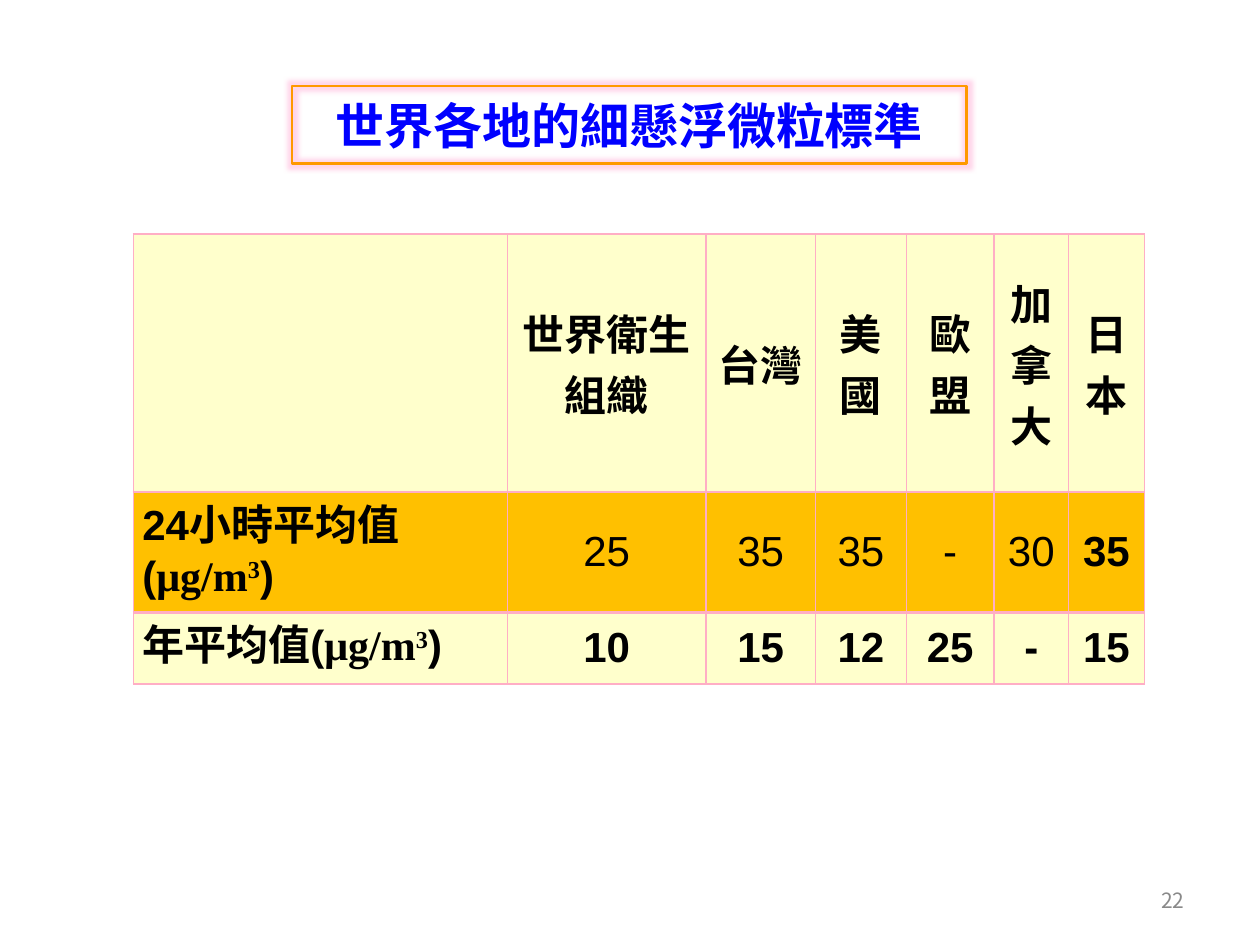
from dataclasses import dataclass
from lxml.etree import SubElement as Sub
from pptx import Presentation as Deck
from pptx.dml.color import RGBColor as Rgb
from pptx.enum.text import MSO_ANCHOR as Anchor, PP_ALIGN as Align
from pptx.oxml.ns import qn
from pptx.util import Cm, Pt


@dataclass(frozen=True)
class Theme:
    # Fonts
    cjk: str = "Noto Sans CJK JP"
    sans: str = "Arial"
    serif: str = "Times New Roman"
    # Colours
    title: str = "0000FF"
    frame: str = "FF9900"
    glow: str = "FF99CC"
    text: str = "000000"
    pale: str = "FFFFCC"
    gold: str = "FFC000"
    rule: str = "FFAEC5"
    grey: str = "898989"
    # Type sizes
    head: int = 28
    body: int = 24
    small: int = 12


class Page:
    def __init__(self, deck, theme):
        self.theme = theme
        self.slide = deck.slides.add_slide(deck.slide_layouts[5])

    def run(self, para, text, font, size, tint, bold=False, base=0):
        run = para.add_run()
        run.text = text
        run.font.name = font
        run.font.size = Pt(size)
        run.font.bold = bold
        run.font.color.rgb = Rgb.from_string(tint)
        prop = run.font._element
        Sub(prop, qn("a:ea"), typeface=self.theme.cjk)
        if base:
            prop.set("baseline", str(base * 1000))

    def title(self, text, box):
        look, shape = self.theme, self.slide.shapes.title
        shape.left, shape.top, shape.width, shape.height = map(Cm, box)
        shape.line.color.rgb = Rgb.from_string(look.frame)
        shape.line.width = Pt(1.5)
        # Soft glow round the frame
        effect = Sub(shape._element.spPr, qn("a:effectLst"))
        glow = Sub(effect, qn("a:glow"), rad=str(Pt(5)))
        tint = Sub(glow, qn("a:srgbClr"), val=look.glow)
        Sub(tint, qn("a:alpha"), val="40000")
        frame = shape.text_frame
        frame.vertical_anchor = Anchor.MIDDLE
        para = frame.paragraphs[0]
        para.alignment = Align.CENTER
        self.run(para, text, look.cjk, look.head, look.title, True)

    def edge(self, cell, side, width):
        line = Sub(cell._tc.get_or_add_tcPr(), qn("a:ln" + side), w=str(Pt(width)))
        fill = Sub(line, qn("a:solidFill"))
        Sub(fill, qn("a:srgbClr"), val=self.theme.rule)

    def cell(self, cell, runs, fill, heavy, first):
        look = self.theme
        cell.margin_left = cell.margin_right = Cm(0.18)
        cell.margin_top = cell.margin_bottom = 0
        cell.vertical_anchor = Anchor.TOP if first else Anchor.MIDDLE
        for side in "LRTB":
            self.edge(cell, side, 2 if side in heavy else 1)
        cell.fill.solid()
        cell.fill.fore_color.rgb = Rgb.from_string(fill)
        para = cell.text_frame.paragraphs[0]
        para.alignment = Align.LEFT if first else Align.CENTER
        for text, font, bold, base in runs:
            self.run(para, text, font, look.body, look.text, bold, base)
        if not runs:
            para.font.size = Pt(look.body)

    def table(self, rows, fills, spot, wide, high):
        box = (*map(Cm, spot), Cm(sum(wide)), Cm(sum(high)))
        grid = self.slide.shapes.add_table(len(rows), len(wide), *box).table
        grid.first_row = grid.horz_banding = False
        for col, size in zip(grid.columns, wide):
            col.width = Cm(size)
        last = len(rows) - 1
        for i, (row, fill) in enumerate(zip(rows, fills)):
            grid.rows[i].height = Cm(high[i])
            # The rule above the last row is double weight
            heavy = "T" if i == last else "B" if i == last - 1 else ""
            for j, runs in enumerate(row):
                self.cell(grid.cell(i, j), runs, fill, heavy, j == 0)

    def number(self, text, box):
        look = self.theme
        frame = self.slide.shapes.add_textbox(*map(Cm, box)).text_frame
        frame.word_wrap = True
        frame.vertical_anchor = Anchor.MIDDLE
        para = frame.paragraphs[0]
        para.alignment = Align.RIGHT
        self.run(para, text, look.cjk, look.small, look.grey)


def main():
    deck = Deck()
    deck.slide_width, deck.slide_height = Cm(25.4), Cm(19.05)
    look = Theme()
    page = Page(deck, look)

    def plain(text, bold=True):
        return [(text, look.sans, bold, 0)]

    def label(text):
        return [(text + "(", look.sans, True, 0), ("μg/m", look.serif, True, 0),
                ("3", look.serif, True, 30), (")", look.sans, True, 0)]

    # Title
    page.title("世界各地的細懸浮微粒標準", (5.89, 1.73, 13.59, 1.57))

    # Limits by place: only the last daily value is bold
    places = ["世界衛生組織", "台灣", "美國", "歐盟", "加拿大", "日本"]
    daily = ["25", "35", "35", "-", "30", "35"]
    yearly = ["10", "15", "12", "25", "-", "15"]
    final = len(daily) - 1
    rows = [
        [[]] + [plain(name) for name in places],
        [label("24小時平均值")] + [plain(v, i == final) for i, v in enumerate(daily)],
        [label("年平均值")] + [plain(v) for v in yearly],
    ]
    page.table(rows, (look.pale, look.gold, look.pale), (2.69, 4.72),
               (7.54, 4, 2.21, 1.83, 1.77, 1.5, 1.53), (5.2, 2.42, 1.45))

    # Page number
    page.number("22", (18.2, 17.65, 5.93, 1.01))
    deck.save("out.pptx")


if __name__ == "__main__":
    main()
